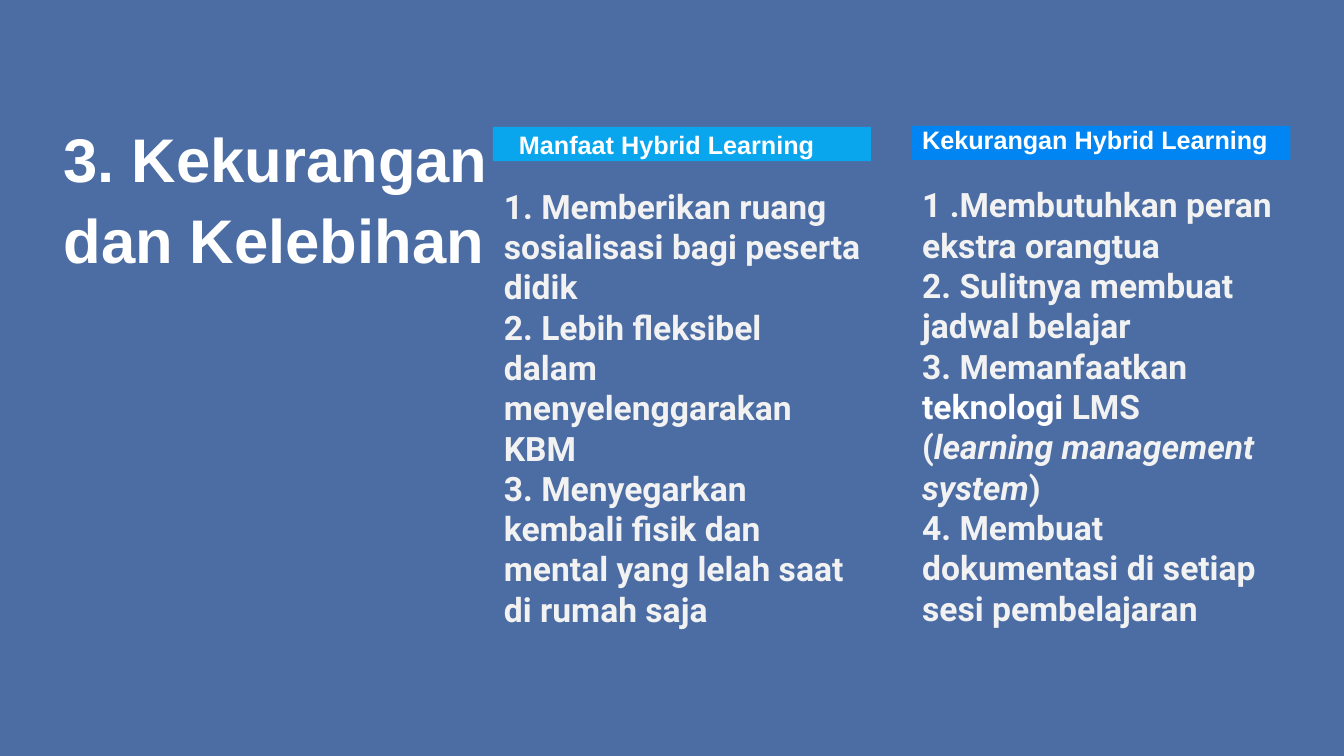
"""Build the slide comparing benefits and drawbacks of hybrid learning."""
import pptx
import pptx.dml.color
import pptx.enum.shapes
import pptx.enum.text
import pptx.oxml
import pptx.oxml.ns
import pptx.util
from pptx.util import Cm

ANCHOR = pptx.enum.text.MSO_ANCHOR
RECTANGLE = pptx.enum.shapes.MSO_SHAPE.RECTANGLE


def paint(color_holder, color):
    """Give a fill or a font a solid colour from a hex string."""
    rgb = pptx.dml.color.RGBColor.from_string(color)
    if hasattr(color_holder, "solid"):
        color_holder.solid()
        color_holder.fore_color.rgb = rgb
    else:
        color_holder.color.rgb = rgb


def add_text(shapes, position, paragraphs, text_format, anchor):
    """Add a wrapped text box; each paragraph is a list of (text, changes)."""
    shape = shapes.add_textbox(*map(Cm, position))
    frame = shape.text_frame
    frame.word_wrap = True
    frame.vertical_anchor = anchor
    for index, runs in enumerate(paragraphs):
        paragraph = frame.paragraphs[0] if index == 0 else frame.add_paragraph()
        for text, changes in runs:
            run = paragraph.add_run()
            run.text = text
            for name, value in {**text_format, **changes}.items():
                if name == "color":
                    paint(run.font, value)
                else:
                    setattr(run.font, name, value)
    return frame


title_format = {"name": "Arial", "size": pptx.util.Pt(44), "bold": True, "color": "FFFFFF"}
heading_format = {**title_format, "size": pptx.util.Pt(18)}
list_format = {"name": "Roboto", "size": pptx.util.Pt(24), "bold": True, "color": "F2F2F2"}

columns = [
    {
        "bar": (12.42, 3.2, 9.53, 0.86),
        "bar_color": "0AA6ED",
        "heading": "Manfaat Hybrid Learning",
        "heading_position": (12.83, 3.12, 8.05, 1.02),
        "list_position": (12.45, 4.55, 9.5, 10.62),
        "items": [
            [("1. Memberikan ruang sosialisasi bagi peserta didik", {})],
            [("2. Lebih fleksibel dalam menyelenggarakan KBM", {})],
            [("3. Menyegarkan kembali fisik dan mental yang lelah saat di rumah saja", {})],
        ],
    },
    {
        "bar": (22.99, 3.17, 9.53, 0.86),
        "bar_color": "0085F2",
        "heading": "Kekurangan Hybrid Learning",
        "heading_position": (22.99, 3, 10.87, 1.02),
        "list_position": (22.99, 4.52, 9.5, 11.13),
        "items": [
            [("1 .Membutuhkan peran ekstra orangtua", {})],
            [("2. Sulitnya membuat jadwal belajar", {})],
            [
                ("3. Memanfaatkan ", {}),
                ("teknologi", {"color": "FFFFFF"}),
                (" LMS (", {}),
                ("learning management system", {"italic": True}),
                (")", {}),
            ],
            [("4. Membuat dokumentasi di setiap sesi pembelajaran", {})],
        ],
    },
]

presentation = pptx.Presentation()
presentation.slide_width = Cm(33.87)
presentation.slide_height = Cm(19.05)
slide = presentation.slides.add_slide(presentation.slide_layouts[6])
paint(slide.background.fill, "FFFFFF")

overlay = slide.shapes.add_shape(
    RECTANGLE, 0, 0, presentation.slide_width, presentation.slide_height
)
overlay.shadow.inherit = False
overlay.line.fill.background()
paint(overlay.fill, "00307E")
overlay_color = overlay.fill._xPr.find(".//" + pptx.oxml.ns.qn("a:srgbClr"))
alpha = pptx.oxml.parse_xml(f'<a:alpha {pptx.oxml.ns.nsdecls("a")} val="70000"/>')
overlay_color.append(alpha)

title = add_text(
    slide.shapes,
    (1.35, 2.87, 11.23, 4.09),
    [[("3. Kekurangan dan Kelebihan", {})]],
    title_format,
    ANCHOR.MIDDLE,
)
title.paragraphs[0].line_spacing = 1.1

for column in columns:
    shapes = slide.shapes.add_group_shape().shapes
    bar = shapes.add_shape(RECTANGLE, *map(Cm, column["bar"]))
    bar.shadow.inherit = False
    bar.line.fill.background()
    paint(bar.fill, column["bar_color"])
    heading = [[(column["heading"], {})]]
    add_text(shapes, column["heading_position"], heading, heading_format, ANCHOR.MIDDLE)
    add_text(shapes, column["list_position"], column["items"], list_format, ANCHOR.TOP)

presentation.save("out.pptx")
